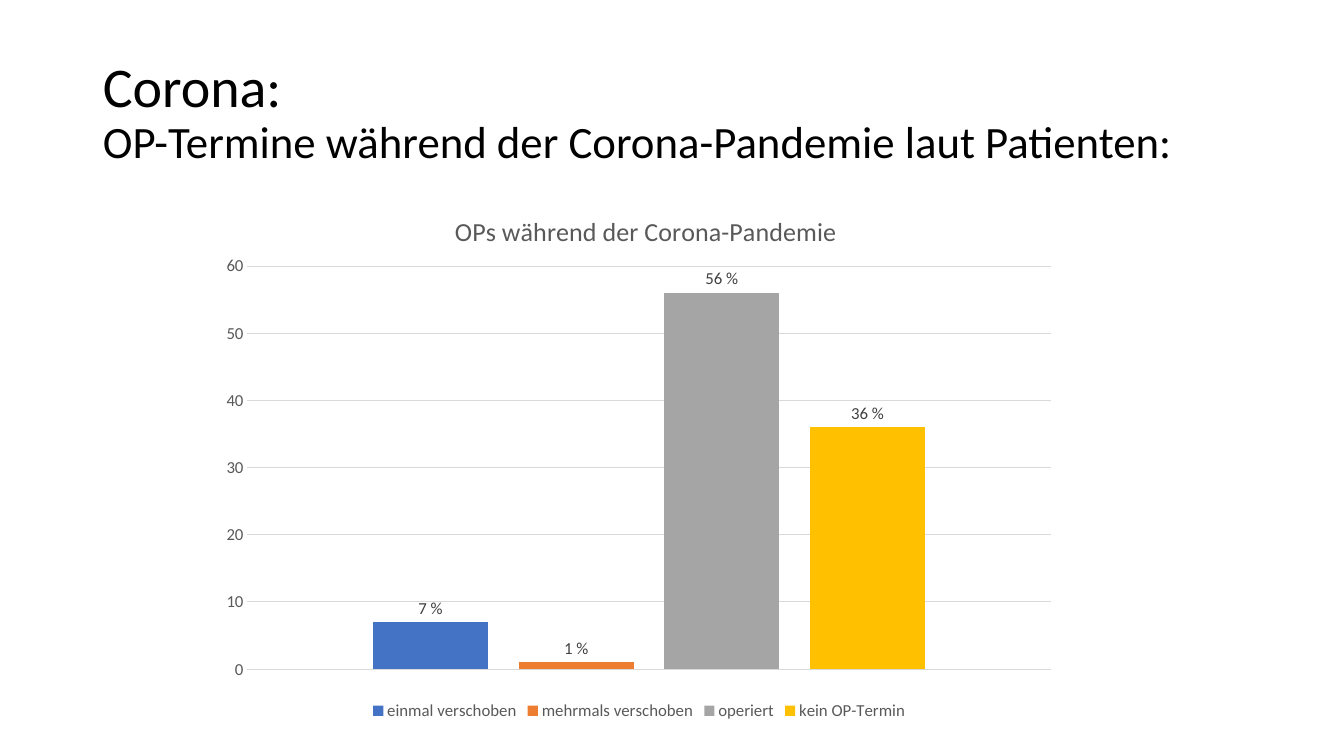
"""Build a slide with a column chart of surgery appointments during the pandemic."""
from lxml.etree import SubElement
from pptx import Presentation
from pptx.chart.data import CategoryChartData
from pptx.dml.color import RGBColor
from pptx.enum.chart import XL_CHART_TYPE as ChartType
from pptx.enum.chart import XL_LABEL_POSITION as LabelPosition
from pptx.enum.chart import XL_LEGEND_POSITION as LegendPosition
from pptx.enum.chart import XL_TICK_MARK as TickMark
from pptx.enum.text import MSO_ANCHOR, MSO_AUTO_SIZE, PP_ALIGN
from pptx.oxml.ns import qn
from pptx.util import Inches, Pt

FONT = "Calibri"
OUTCOMES = [
    ("einmal verschoben", 7, "4472C4"),
    ("mehrmals verschoben", 1, "ED7D31"),
    ("operiert", 56, "A5A5A5"),
    ("kein OP-Termin", 36, "FFC000"),
]

hex_color = RGBColor.from_string


def style(font, size, color):
    font.name, font.size, font.bold = FONT, Pt(size), False
    font.color.rgb = hex_color(color)


def write(paragraph, text, size=12, color="000000"):
    run = paragraph.add_run()
    run.text = text
    style(run.font, size, color)


deck = Presentation()
deck.slide_width, deck.slide_height = Inches(13.33), Inches(7.5)
slide = deck.slides.add_slide(deck.slide_layouts[5])

heading = slide.shapes.title
heading.left, heading.top = Inches(0.92), Inches(0.4)
heading.width, heading.height = Inches(11.5), Inches(1.45)
heading.text_frame.word_wrap = True
heading.text_frame.auto_size = MSO_AUTO_SIZE.NONE
heading.text_frame.vertical_anchor = MSO_ANCHOR.MIDDLE
headline = heading.text_frame.paragraphs[0]
headline.alignment, headline.line_spacing = PP_ALIGN.LEFT, 0.9
write(headline, "Corona:", size=40)
headline.add_line_break()
write(headline, "OP-Termine während der Corona-Pandemie laut Patienten:", size=32)

survey = CategoryChartData(number_format="General")
survey.categories = ["1"]
for outcome, percent, _ in OUTCOMES:
    survey.add_series(outcome, [percent])
chart = slide.shapes.add_chart(
    ChartType.COLUMN_CLUSTERED,
    Inches(2.08), Inches(1.85), Inches(8.52), Inches(5.34), survey,
).chart
style(chart.font, 10, "000000")

chart.has_title = True
caption = chart.chart_title.text_frame.paragraphs[0]
write(caption, "OPs während der Corona-Pandemie", size=18.6, color="595959")
chart.chart_title.include_in_layout = False

chart.has_legend = True
chart.legend.position = LegendPosition.BOTTOM
chart.legend.include_in_layout = False
style(chart.legend.font, 12, "595959")

chart.category_axis.visible = False
scale = chart.value_axis
scale.minimum_scale, scale.maximum_scale, scale.major_unit = 0, 60, 10
scale.major_tick_mark = scale.minor_tick_mark = TickMark.NONE
scale.format.line.fill.background()
scale.major_gridlines.format.line.color.rgb = hex_color("D9D9D9")
scale.major_gridlines.format.line.width = Pt(0.75)
style(scale.tick_labels.font, 12, "595959")

columns = chart.plots[0]
columns.gap_width, columns.overlap = 219, -27
columns.vary_by_categories = False
for series, (_, _, color) in zip(columns.series, OUTCOMES):
    series.format.fill.solid()
    series.format.fill.fore_color.rgb = hex_color(color)
    labels = series.data_labels
    labels.show_value = True
    labels.number_format, labels.number_format_is_linked = '0" %"', False
    labels.position = LabelPosition.OUTSIDE_END
    style(labels.font, 12, "404040")

LAYOUTS = [
    ("c:title", 1, {"xMode": "edge", "yMode": "edge", "x": 0.28, "y": 0.04}),
    ("c:plotArea", 0, {"layoutTarget": "inner", "xMode": "edge", "yMode": "edge",
                       "x": 0.044, "y": 0.148, "w": 0.935, "h": 0.749}),
]
for tag, position, settings in LAYOUTS:
    area = chart.element.find(f"{qn('c:chart')}/{qn(tag)}")
    for automatic in area.findall(qn("c:layout")):
        area.remove(automatic)
    layout = SubElement(area, qn("c:layout"))
    area.insert(position, layout)
    manual = SubElement(layout, qn("c:manualLayout"))
    for setting, value in settings.items():
        SubElement(manual, qn(f"c:{setting}")).set("val", str(value))

deck.save("out.pptx")
